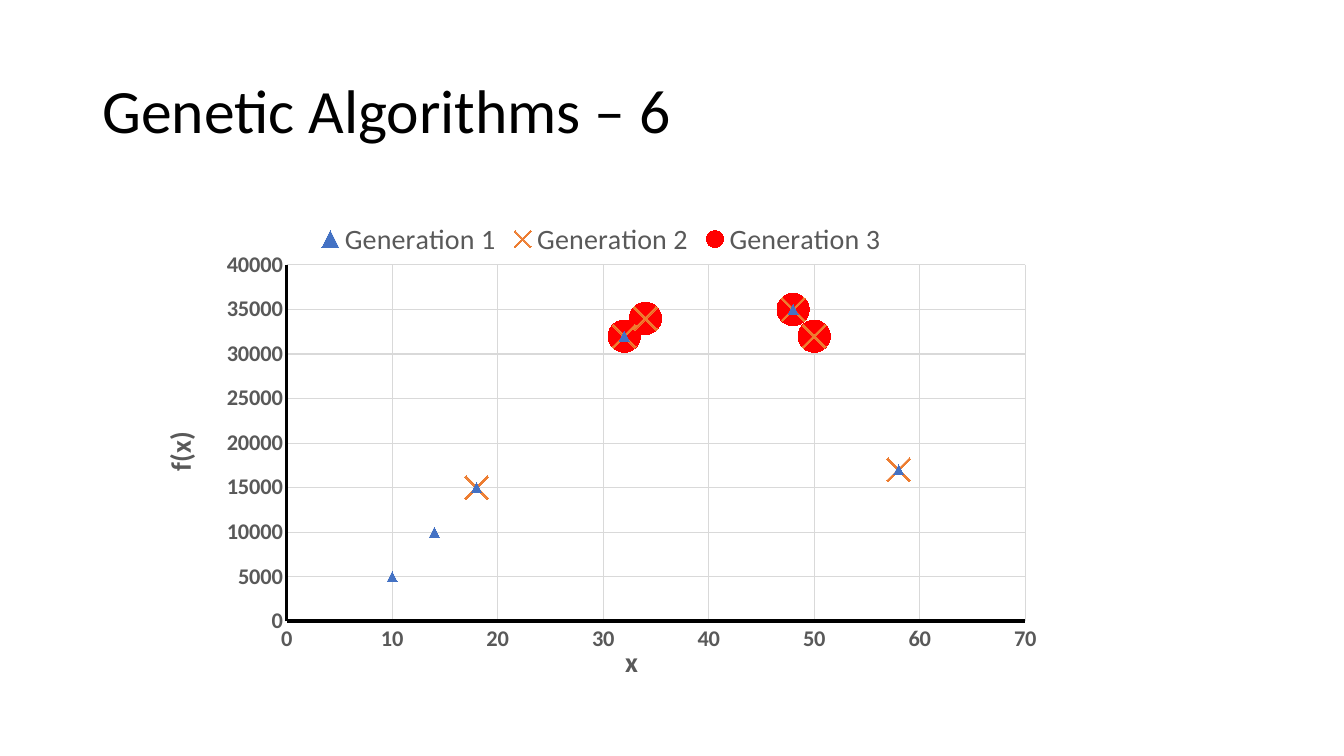
from lxml import etree
from pptx import Presentation
from pptx.chart.data import XyChartData
from pptx.dml.color import RGBColor
from pptx.enum.chart import XL_CHART_TYPE, XL_LEGEND_POSITION, XL_MARKER_STYLE, XL_TICK_MARK
from pptx.enum.text import MSO_ANCHOR
from pptx.oxml.ns import qn
from pptx.util import Pt

FONT = "Calibri"
COLORS = {"black": "000000", "text": "595959", "grid": "D9D9D9",
          "blue": "4472C4", "orange": "ED7D31", "red": "FF0000"}
TITLE = "Genetic Algorithms – 6"
FITNESS = {10: 5000, 14: 10000, 18: 15000, 32: 32000, 34: 34000,
           48: 35000, 50: 32000, 58: 17000}
GENERATIONS = [
    ("Generation 1", [58, 32, 10, 48, 18, 14], XL_MARKER_STYLE.TRIANGLE, 7, "blue"),
    ("Generation 2", [48, 34, 50, 32, 58, 18], XL_MARKER_STYLE.X, 17, "orange"),
    ("Generation 3", [48, 34, 34, 50, 50, 32], XL_MARKER_STYLE.CIRCLE, 23, "red"),
]
AXES = [("x", 70, 10, 3), ("f(x)", 40000, 5000, 2.5)]
CHART_W, CHART_H = 706.3, 342.7
PLOT = {"x": 128.5, "y": 40.1, "w": 527.6, "h": 254.6}
Y_TITLE = {"x": 34.5, "y": 155.8}


def rgb(name):
    return RGBColor.from_string(COLORS[name])


def set_font(font, size, color, bold=False):
    font.name, font.size, font.bold = FONT, Pt(size), bold
    font.color.rgb = rgb(color)


def set_line(line, color, width):
    line.color.rgb = rgb(color)
    line.width = Pt(width)


def set_layout(parent, index, box, inner=False):
    for old in parent.findall(qn("c:layout")):
        parent.remove(old)
    layout = etree.Element(qn("c:layout"))
    manual = etree.SubElement(layout, qn("c:manualLayout"))
    if inner:
        etree.SubElement(manual, qn("c:layoutTarget")).set("val", "inner")
    for key in ("x", "y"):
        etree.SubElement(manual, qn(f"c:{key}Mode")).set("val", "edge")
    for key, length in box.items():
        share = length / (CHART_W if key in "xw" else CHART_H)
        etree.SubElement(manual, qn(f"c:{key}")).set("val", f"{share:.4f}")
    parent.insert(index, layout)


def style_axis(axis, title, top, step, width):
    axis.minimum_scale, axis.maximum_scale, axis.major_unit = 0, top, step
    axis.major_tick_mark = axis.minor_tick_mark = XL_TICK_MARK.NONE
    axis.has_major_gridlines = True
    set_line(axis.major_gridlines.format.line, "grid", 0.75)
    set_line(axis.format.line, "black", width)
    set_font(axis.tick_labels.font, 16, "text", True)
    axis.tick_labels.number_format = "General"
    axis.tick_labels.number_format_is_linked = False
    tf = axis.axis_title.text_frame
    tf.text = title
    set_font(tf.paragraphs[0].runs[0].font, 20, "text", True)


def add_title(s):
    tf = s.shapes.add_textbox(Pt(66), Pt(28.75), Pt(828), Pt(104.4)).text_frame
    tf.word_wrap = True
    tf.vertical_anchor = MSO_ANCHOR.MIDDLE
    tf.text = TITLE
    p = tf.paragraphs[0]
    p.line_spacing = 0.9
    set_font(p.runs[0].font, 44, "black")


def add_fitness_chart(s):
    data = XyChartData()
    for name, xs, *_ in GENERATIONS:
        series = data.add_series(name)
        for x in xs:
            series.add_data_point(x, FITNESS[x])
    chart = s.shapes.add_chart(XL_CHART_TYPE.XY_SCATTER, Pt(76.3), Pt(149.2),
                               Pt(CHART_W), Pt(CHART_H), data).chart
    set_font(chart.font, 16, "black")
    chart.has_title = False
    chart.has_legend = True
    chart.legend.position = XL_LEGEND_POSITION.TOP
    chart.legend.include_in_layout = False
    set_font(chart.legend.font, 20, "text")

    plot = chart.plots[0]
    plot.vary_by_categories = False
    for series, (_, _, style, size, color) in zip(plot.series, GENERATIONS):
        series.smooth = False
        series.format.line.fill.background()
        marker = series.marker
        marker.style, marker.size = style, size
        marker.format.fill.solid()
        marker.format.fill.fore_color.rgb = rgb(color)
        set_line(marker.format.line, color, 0.75)

    for axis, settings in zip((chart.category_axis, chart.value_axis), AXES):
        style_axis(axis, *settings)
    area = chart.element.find(".//" + qn("c:plotArea"))
    set_layout(area, 0, PLOT, inner=True)
    y_title = area.findall(qn("c:valAx"))[1].find(qn("c:title"))
    set_layout(y_title, 1, Y_TITLE)
    body = y_title.find(".//" + qn("a:bodyPr"))
    body.set("rot", "-5400000")
    body.set("vert", "horz")


def main():
    prs = Presentation()
    prs.slide_width, prs.slide_height = Pt(960), Pt(540)
    s = prs.slides.add_slide(prs.slide_layouts[6])
    add_title(s)
    add_fitness_chart(s)
    prs.save("out.pptx")


if __name__ == "__main__":
    main()
